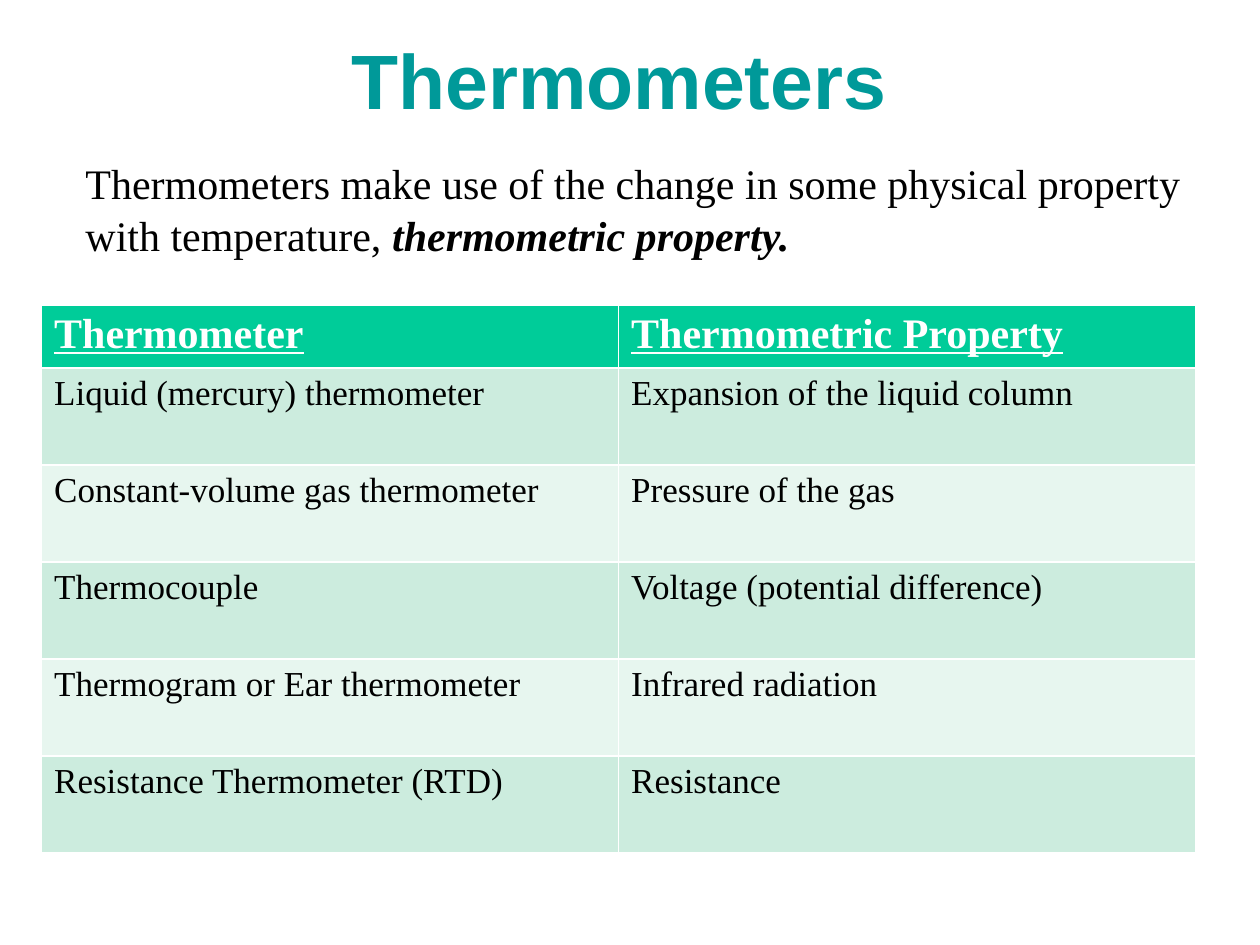
from pptx import Presentation
from pptx.dml.color import RGBColor
from pptx.enum.text import MSO_ANCHOR, PP_ALIGN
from pptx.util import Inches, Pt

CENTER = PP_ALIGN.CENTER
MIDDLE = MSO_ANCHOR.MIDDLE
TITLE_ONLY = 5
SERIF = "Times New Roman"
COLORS = {
    "title": "009999",
    "text": "000000",
    "header_text": "FFFFFF",
    "header": "00CC99",
    "odd_row": "CCECDE",
    "even_row": "E7F6EF",
}
ROWS = [
    ("Thermometer", "Thermometric Property"),
    ("Liquid (mercury) thermometer", "Expansion of the liquid column"),
    ("Constant-volume gas thermometer", "Pressure of the gas"),
    ("Thermocouple", "Voltage (potential difference)"),
    ("Thermogram or Ear thermometer", "Infrared radiation"),
    ("Resistance Thermometer (RTD)", "Resistance"),
]


def color(name):
    """Return the named colour."""
    return RGBColor.from_string(COLORS[name])


def set_font(font, name, size, color_name, bold=False):
    """Set the face, size, colour and weight of a font."""
    font.name = name
    font.size = Pt(size)
    font.bold = bold
    font.color.rgb = color(color_name)


def add_title(page, text):
    """Place and format the title placeholder."""
    title = page.shapes.title
    title.left, title.top = Inches(0.75), Inches(0)
    title.width, title.height = Inches(8.5), Inches(1.25)
    title.text_frame.vertical_anchor = MIDDLE
    para = title.text_frame.paragraphs[0]
    para.text = text
    para.alignment = CENTER
    set_font(para.font, "Arial", 44, "title", bold=True)


def add_definition(page, text, term):
    """Add the introductory sentence with its emphasised term."""
    box = page.shapes.add_textbox(Inches(0.58), Inches(1.19), Inches(9.3), Inches(0.91))
    box.text_frame.word_wrap = True
    para = box.text_frame.paragraphs[0]
    para.line_spacing = 1.03
    set_font(para.font, SERIF, 24, "text")
    para.add_run().text = text
    span = para.add_run()
    span.text = term
    span.font.bold = span.font.italic = True


def fill_cell(cell, text, fill, size, text_color, is_header):
    """Write one table cell and fill its background."""
    cell.fill.solid()
    cell.fill.fore_color.rgb = color(fill)
    para = cell.text_frame.paragraphs[0]
    para.text = text
    set_font(para.font, SERIF, size, text_color, bold=is_header)
    para.font.underline = is_header


def add_property_table(page, rows):
    """Add the table of thermometers and their properties."""
    frame = page.shapes.add_table(
        len(rows), 2, Inches(0.33), Inches(2.42), Inches(9.16), Inches(4.34)
    )
    table = frame.table
    for index, texts in enumerate(rows):
        is_header = index == 0
        table.rows[index].height = Inches(0.49 if is_header else 0.77)
        if is_header:
            style = ("header", 24, "header_text")
        else:
            style = ("odd_row" if index % 2 else "even_row", 20, "text")
        for column, text in enumerate(texts):
            fill_cell(table.cell(index, column), text, *style, is_header)


def main():
    """Build and save the slide."""
    deck = Presentation()
    deck.slide_width, deck.slide_height = Inches(10), Inches(7.5)
    page = deck.slides.add_slide(deck.slide_layouts[TITLE_ONLY])
    add_title(page, "Thermometers ")
    add_definition(
        page,
        "Thermometers make use of the change in some physical property with temperature, ",
        "thermometric property.",
    )
    add_property_table(page, ROWS)
    deck.save("out.pptx")


if __name__ == "__main__":
    main()
